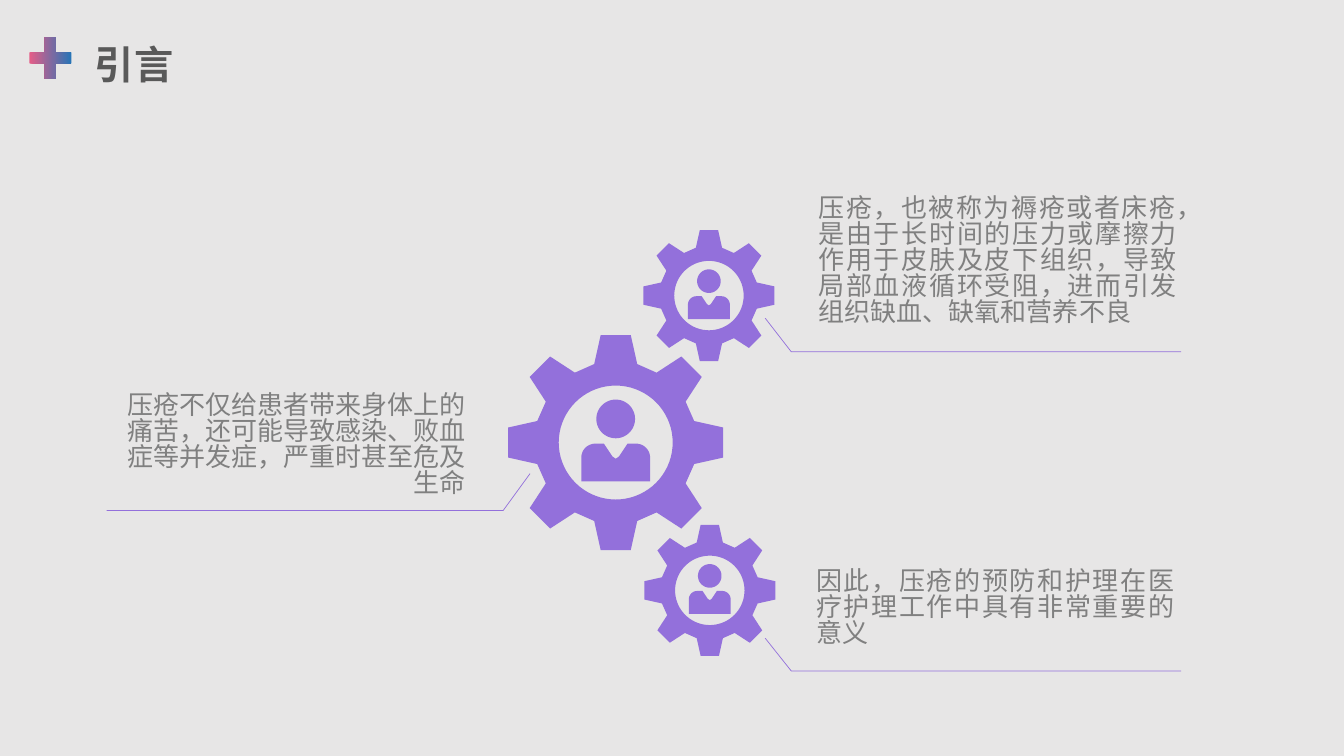
from copy import deepcopy
from math import cos, pi, sin

from lxml.etree import SubElement
from pptx import Presentation
from pptx.dml.color import RGBColor
from pptx.enum.shapes import MSO_SHAPE
from pptx.enum.text import MSO_ANCHOR, MSO_AUTO_SIZE, PP_ALIGN
from pptx.oxml.ns import qn
from pptx.util import Inches, Pt

COLUMNS = 16
FONT = "Noto Sans CJK SC"
BACKDROP, HEADING, BODY, PURPLE = "E7E6E6", "595959", "808080", "9370DB"
PLUS_STOPS = [(0, "E55D87"), (0.57, "786AA2"), (1, "2674B6")]

# Half of one tooth and the valley beside it, for a gear of radius 1.
TOOTH = [(0.14, -1), (0.2, -0.73), (0.38, -0.65), (0.61, -0.8)]
HOLE_RADIUS = 0.53

# Centre and radius of each gear, in grid cells.
GEARS = [((8.45, 7.03), 0.78), ((8.44, 3.52), 0.78), ((7.33, 5.27), 1.28)]

# Text, its box, its alignment and the line that leads to its gear.
CALLOUTS = [
    ("压疮不仅给患者带来身体上的痛苦，还可能导致感染、败血症等并发症，严重时甚至危及生命",
     (1.12, 4.19, 4.58, 1.82), PP_ALIGN.RIGHT,
     [(6.31, 5.64), (5.99, 6.08), (1.27, 6.08)]),
    ("压疮，也被称为褥疮或者床疮，是由于长时间的压力或摩擦力作用于皮肤及皮下组织，"
     "导致局部血液循环受阻，进而引发组织缺血、缺氧和营养不良",
     (9.59, 2.23, 4.58, 1.75), PP_ALIGN.JUSTIFY,
     [(9.11, 3.79), (9.42, 4.19), (14.06, 4.19)]),
    ("因此，压疮的预防和护理在医疗护理工作中具有非常重要的意义",
     (9.56, 6.01, 4.58, 1.79), PP_ALIGN.JUSTIFY,
     [(9.11, 7.6), (9.42, 7.99), (14.06, 7.99)]),
]


def color(hex_code):
    return RGBColor.from_string(hex_code)


def write(frame, text, *, size, ink, bold=False, align=PP_ALIGN.LEFT,
          anchor=MSO_ANCHOR.MIDDLE, spacing=None):
    frame.word_wrap = True
    frame.auto_size = MSO_AUTO_SIZE.NONE
    frame.vertical_anchor = anchor
    paragraph = frame.paragraphs[0]
    paragraph.alignment = align
    paragraph.line_spacing = spacing
    run = paragraph.add_run()
    run.text = text
    run.font.size, run.font.bold = Pt(size), bold
    run.font.name, run.font.color.rgb = FONT, color(ink)
    SubElement(run.font._element, qn("a:ea"), typeface=FONT)


def arc(center, radius, start=0.0, sweep=2 * pi, steps=72):
    x, y = center
    angles = [start + sweep * step / steps for step in range(steps + 1)]
    return [(x + radius * cos(a), y + radius * sin(a)) for a in angles]


def gear_outline():
    """Mirror the half tooth into a quarter, then turn the quarter four times."""
    quarter = TOOTH + [(-y, -x) for x, y in reversed(TOOTH)]
    outline = []
    for _ in range(4):
        outline += quarter
        quarter = [(-y, x) for x, y in quarter]
    return outline


def person_body():
    left = arc((-0.19, 0.14), 0.13, pi, pi / 2, 12)
    right = arc((0.19, 0.14), 0.13, -pi / 2, pi / 2, 12)
    collar = [(-0.11, 0.01), (-0.03, 0.13), (0, 0.15), (0.03, 0.13), (0.11, 0.01)]
    return left + collar + right + [(0.32, 0.36), (-0.32, 0.36)]


class GridSlide:
    """Places elements on one slide; every length counts square grid cells."""

    def __init__(self, deck):
        self.cell = deck.slide_width / COLUMNS
        self.slide = deck.slides.add_slide(deck.slide_layouts[5])
        self.shapes = self.slide.shapes
        self.slide.background.fill.solid()
        self.slide.background.fill.fore_color.rgb = color(BACKDROP)

    def emu(self, *cells):
        return [round(value * self.cell) for value in cells]

    def title(self, text, box):
        heading = self.shapes.title
        heading.left, heading.top, heading.width, heading.height = self.emu(*box)
        write(heading.text_frame, text, size=28, ink=HEADING, bold=True)

    def plus(self, box):
        cross = self.shapes.add_shape(MSO_SHAPE.CROSS, *self.emu(*box))
        cross.adjustments[0] = 0.37
        cross.shadow.inherit = False
        cross.line.fill.background()
        cross.fill.gradient()
        cross.fill.gradient_angle = 0
        stop_list = cross._element.spPr.find(".//" + qn("a:gsLst"))
        stop_list.append(deepcopy(stop_list[-1]))
        for stop, (position, hue) in zip(cross.fill.gradient_stops, PLUS_STOPS):
            stop.position, stop.color.rgb = position, color(hue)

    def freeform(self, contours, closed=True):
        """Draw a filled outline, or a thin open line when not closed."""
        builder = None
        for contour in contours:
            first, *others = [self.emu(*point) for point in contour]
            if builder is None:
                builder = self.shapes.build_freeform(*first)
            else:
                builder.move_to(*first)
            builder.add_line_segments(others, close=closed)
        shape = builder.convert_to_shape()
        shape.shadow.inherit = False
        if closed:
            shape.fill.solid()
            shape.fill.fore_color.rgb = color(PURPLE)
            shape.line.fill.background()
        else:
            shape.fill.background()
            shape.line.color.rgb = color(PURPLE)
            shape.line.width = Pt(0.5)

    def gear(self, center, radius):
        wheel = [gear_outline(), arc((0, 0), HOLE_RADIUS)]
        person = [arc((0, -0.22), 0.18), person_body()]
        for contours in (wheel, person):
            self.freeform([[(center[0] + radius * x, center[1] + radius * y)
                            for x, y in contour] for contour in contours])

    def callout(self, text, box, align, leader):
        self.freeform([leader], closed=False)
        frame = self.shapes.add_textbox(*self.emu(*box)).text_frame
        frame.margin_left = frame.margin_right = Inches(0.13)
        frame.margin_top = frame.margin_bottom = Inches(0.07)
        write(frame, text, size=18.6, ink=BODY, align=align,
              anchor=MSO_ANCHOR.BOTTOM, spacing=Pt(18.6))


def main():
    deck = Presentation()
    deck.slide_width, deck.slide_height = Inches(13.33), Inches(7.5)
    intro = GridSlide(deck)
    intro.plus((0.35, 0.44, 0.5, 0.5))
    intro.title("引言", (1.01, 0.41, 14.39, 0.7))
    for center, radius in GEARS:
        intro.gear(center, radius)
    for callout in CALLOUTS:
        intro.callout(*callout)
    deck.save("out.pptx")


if __name__ == "__main__":
    main()
